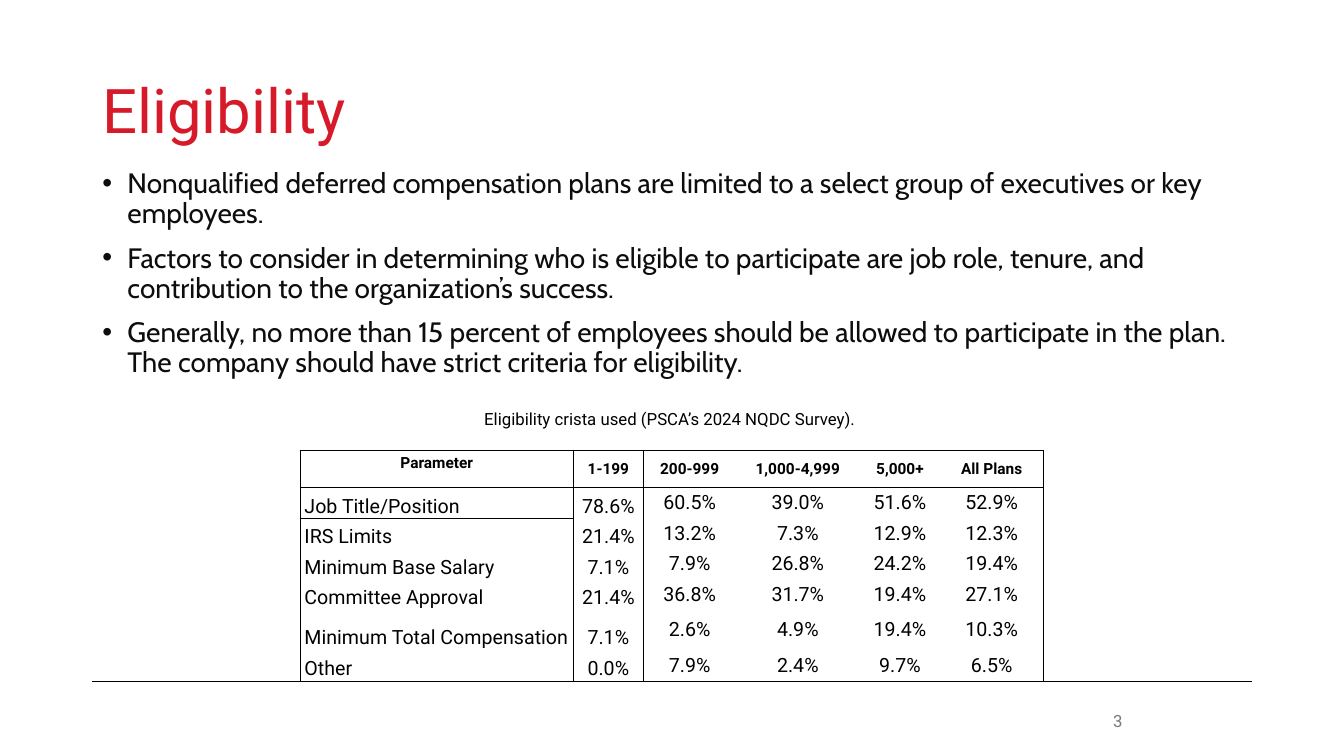
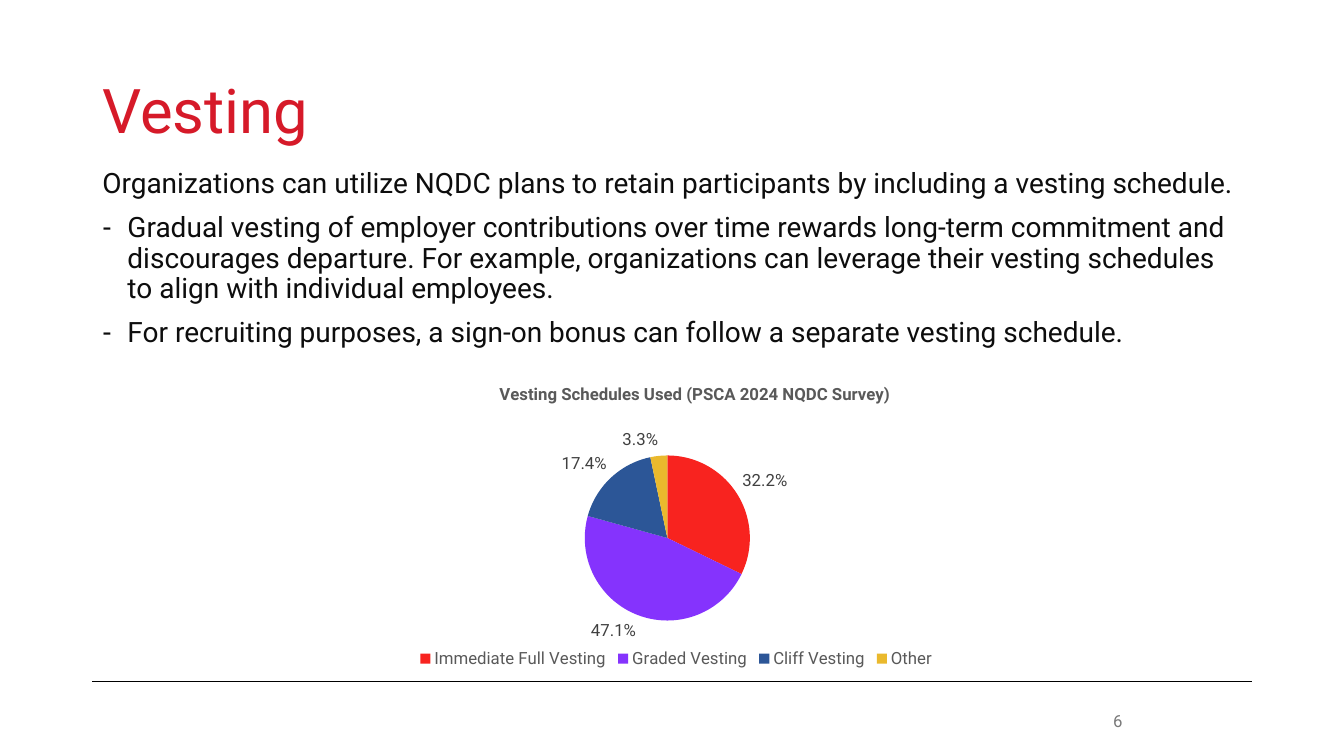
from dataclasses import dataclass

from lxml.etree import SubElement
from pptx import Presentation
from pptx.chart.data import CategoryChartData
from pptx.dml.color import RGBColor
from pptx.enum.chart import XL_CHART_TYPE, XL_LABEL_POSITION, XL_LEGEND_POSITION
from pptx.enum.shapes import MSO_CONNECTOR
from pptx.enum.text import MSO_ANCHOR, PP_ALIGN
from pptx.oxml.ns import qn
from pptx.presentation import Presentation as Deck
from pptx.slide import Slide
from pptx.text.text import Font, TextFrame
from pptx.util import Pt

RED = RGBColor(0xD6, 0x1A, 0x29)
INK = RGBColor(0x0D, 0x0D, 0x0D)
BLACK = RGBColor(0, 0, 0)
GRAY = RGBColor(0x79, 0x79, 0x79)
SLATE = RGBColor(0x59, 0x59, 0x59)
DARK = RGBColor(0x40, 0x40, 0x40)
HEAD, BODY = "Roboto", "Cabin"
LEFT, WIDE, RULE = 66, 828, 486.5
PLAIN = "{2D5ABB26-0587-4C30-8999-92F81FD0307C}"


@dataclass(frozen=True)
class Point:
    text: str
    mark: str = ""


@dataclass(frozen=True)
class Page:
    title: str
    page: str
    font: str
    points: tuple[Point, ...]


@dataclass(frozen=True)
class Slice:
    name: str
    share: float
    color: RGBColor


PLANS = Page("Eligibility", "3", BODY, (
    Point("Nonqualified deferred compensation plans are limited to a select group of "
          "executives or key employees.", "•"),
    Point("Factors to consider in determining who is eligible to participate are job role, "
          "tenure, and contribution to the organization’s success.", "•"),
    Point("Generally, no more than 15 percent of employees should be allowed to participate "
          "in the plan. The company should have strict criteria for eligibility.", "•"),
))
VESTING = Page("Vesting", "6", HEAD, (
    Point("Organizations can utilize NQDC plans to retain participants by including a "
          "vesting schedule."),
    Point("Gradual vesting of employer contributions over time rewards long-term commitment "
          "and discourages departure. For example, organizations can leverage their vesting "
          "schedules to align with individual employees.", "-"),
    Point("For recruiting purposes, a sign-on bonus can follow a separate vesting "
          "schedule.", "-"),
))
ROWS = (
    ("Parameter", "1-199", "200-999", "1,000-4,999", "5,000+", "All Plans"),
    ("Job Title/Position", "78.6%", "60.5%", "39.0%", "51.6%", "52.9%"),
    ("IRS Limits", "21.4%", "13.2%", "7.3%", "12.9%", "12.3%"),
    ("Minimum Base Salary", "7.1%", "7.9%", "26.8%", "24.2%", "19.4%"),
    ("Committee Approval", "21.4%", "36.8%", "31.7%", "19.4%", "27.1%"),
    ("Minimum Total Compensation", "7.1%", "2.6%", "4.9%", "19.4%", "10.3%"),
    ("Other", "0.0%", "7.9%", "2.4%", "9.7%", "6.5%"),
)
WIDTHS = (195, 50.2, 66, 88.5, 57.5, 73.5)
HEIGHTS = (26.6, 21.8, 21.8, 21.8, 21.8, 28.6, 22.2)
SLICES = (
    Slice("Immediate Full Vesting", 0.322, RGBColor(0xF8, 0x23, 0x1F)),
    Slice("Graded Vesting", 0.471, RGBColor(0x85, 0x33, 0xFD)),
    Slice("Cliff Vesting", 0.174, RGBColor(0x2C, 0x56, 0x97)),
    Slice("Other", 0.033, RGBColor(0xEA, 0xB9, 0x2D)),
)


def style(font: Font, size: float, color: RGBColor, face: str = HEAD,
          bold: bool = False) -> None:
    font.name, font.size, font.bold = face, Pt(size), bold
    font.color.rgb = color


def write(frame: TextFrame, text: str, *, size: float = 12, color: RGBColor = BLACK,
          face: str = HEAD, bold: bool = False, align: PP_ALIGN = PP_ALIGN.LEFT,
          lead: float = 1.0, gap: float = 0, mark: str = "") -> None:
    fresh = not frame.text
    para = frame.paragraphs[0] if fresh else frame.add_paragraph()
    if mark:
        props = para._p.get_or_add_pPr()
        props.set("marL", str(Pt(18)))
        props.set("indent", str(Pt(-18)))
        SubElement(props, qn("a:buFont"), typeface="Arial")
        SubElement(props, qn("a:buChar"), char=mark)
    para.alignment, para.line_spacing = align, lead
    if gap and not fresh:
        para.space_before = Pt(gap)
    run = para.add_run()
    run.text = text
    style(run.font, size, color, face, bold)


def add_box(slide: Slide, left: float, top: float, width: float, height: float,
            anchor: MSO_ANCHOR = MSO_ANCHOR.MIDDLE) -> TextFrame:
    frame = slide.shapes.add_textbox(Pt(left), Pt(top), Pt(width), Pt(height)).text_frame
    frame.word_wrap, frame.vertical_anchor = True, anchor
    return frame


def add_page(deck: Deck, page: Page) -> Slide:
    slide = deck.slides.add_slide(deck.slide_layouts.get_by_name("Title Only"))
    title = slide.shapes.title
    title.left, title.top, title.width, title.height = Pt(LEFT), Pt(29), Pt(WIDE), Pt(104.4)
    title.text_frame.vertical_anchor = MSO_ANCHOR.MIDDLE
    write(title.text_frame, page.title, size=44, color=RED, lead=0.9)

    rule = slide.shapes.add_connector(
        MSO_CONNECTOR.STRAIGHT, Pt(LEFT), Pt(RULE), Pt(LEFT + WIDE), Pt(RULE))
    rule.line.color.rgb, rule.line.width = BLACK, Pt(0.5)
    SubElement(rule.element.find(qn("p:spPr")), qn("a:effectLst"))

    body = add_box(slide, LEFT, 117.4, WIDE, 165, MSO_ANCHOR.TOP)
    base = body._txBody.find(qn("a:lstStyle"))
    level = SubElement(base, qn("a:lvl1pPr"))
    SubElement(level, qn("a:defRPr"), sz="2000")
    for point in page.points:
        write(body, point.text, size=20, color=INK, face=page.font, lead=0.9, gap=10,
              mark=point.mark)
    write(add_box(slide, 678, 500.5, 131, 28.8), page.page, color=GRAY, align=PP_ALIGN.RIGHT)
    return slide


def edge(cell, rules: dict[str, bool]) -> None:
    props = cell._tc.get_or_add_tcPr()
    for side, drawn in rules.items():
        line = SubElement(props, qn(f"a:ln{side}"), w=str(Pt(1)))
        if drawn:
            fill = SubElement(line, qn("a:solidFill"))
            SubElement(fill, qn("a:srgbClr"), val=str(BLACK))
        else:
            SubElement(line, qn("a:noFill"))


def add_grid(slide: Slide) -> None:
    shape = slide.shapes.add_table(len(ROWS), len(WIDTHS), Pt(214.5), Pt(321.8),
                                   Pt(sum(WIDTHS)), Pt(sum(HEIGHTS)))
    grid = shape.table
    grid.first_row = grid.horz_banding = False
    next(shape.element.iter(qn("a:tableStyleId"))).text = PLAIN
    for col, width in zip(grid.columns, WIDTHS):
        col.width = Pt(width)
    for row, height in zip(grid.rows, HEIGHTS):
        row.height = Pt(height)
    last = len(WIDTHS) - 1
    for r, words in enumerate(ROWS):
        for c, text in enumerate(words):
            cell = grid.cell(r, c)
            head, corner = r == 0, r == c == 0
            edge(cell, {"L": c < 3, "R": c < 2 or c == last,
                        "T": r < 2 or (r, c) == (2, 0), "B": head or (r, c) == (1, 0)})
            cell.fill.background()
            cell.margin_left = cell.margin_right = Pt(5 if corner else 4 if c else 3)
            cell.margin_top = cell.margin_bottom = Pt(3 if corner else 0)
            if corner:
                cell.vertical_anchor = MSO_ANCHOR.TOP
            elif head or c > 1:
                cell.vertical_anchor = MSO_ANCHOR.MIDDLE
            else:
                cell.vertical_anchor = MSO_ANCHOR.BOTTOM
            write(cell.text_frame, text, size=11 if head else 14, bold=head,
                  align=PP_ALIGN.CENTER if head or c else PP_ALIGN.LEFT)


def place(part, index: int, inner: bool = False, **spots: float) -> None:
    for old in part.findall(qn("c:layout")):
        part.remove(old)
    layout = SubElement(part, qn("c:layout"))
    part.insert(index, layout)
    manual = SubElement(layout, qn("c:manualLayout"))
    if inner:
        SubElement(manual, qn("c:layoutTarget"), val="inner")
    for axis in "xy":
        SubElement(manual, qn(f"c:{axis}Mode"), val="edge")
    for name, value in spots.items():
        SubElement(manual, qn(f"c:{name}"), val=str(value))


def add_pie(slide: Slide) -> None:
    data = CategoryChartData(number_format="0.0%")
    data.categories = [part.name for part in SLICES]
    data.add_series("Series 1", [part.share for part in SLICES])
    chart = slide.shapes.add_chart(XL_CHART_TYPE.PIE, Pt(270.3), Pt(266.4), Pt(421.2),
                                   Pt(226.8), data).chart
    style(chart.font, 10, BLACK)
    chart.has_title = True
    write(chart.chart_title.text_frame, "Vesting Schedules Used (PSCA 2024 NQDC Survey)",
          color=SLATE, bold=True)
    chart.has_legend = True
    chart.legend.position = XL_LEGEND_POSITION.BOTTOM
    chart.legend.include_in_layout = False
    style(chart.legend.font, 12, SLATE)

    plot = chart.plots[0]
    plot.vary_by_categories = True
    for index, part in enumerate(SLICES):
        fill = plot.series[0].points[index].format.fill
        fill.solid()
        fill.fore_color.rgb = part.color
    plot.has_data_labels = True
    labels = plot.data_labels
    labels.show_value, labels.position = True, XL_LABEL_POSITION.OUTSIDE_END
    labels.number_format, labels.number_format_is_linked = "0.0%", False
    style(labels.font, 12, DARK)

    root = chart.element
    place(next(root.iter(qn("c:title"))), 1, x=0.2, y=0.02)
    place(next(root.iter(qn("c:plotArea"))), 0, inner=True, x=0.35, y=0.26, w=0.28, h=0.52)
    place(next(root.iter(qn("c:legend"))), 1, x=0.06, y=0.86, w=0.89, h=0.08)


def main() -> None:
    deck = Presentation()
    deck.slide_width, deck.slide_height = Pt(960), Pt(540)
    plans = add_page(deck, PLANS)
    write(add_box(plans, LEFT - 1.5, 287, WIDE, 25),
          "Eligibility crista used (PSCA’s 2024 NQDC Survey).", align=PP_ALIGN.CENTER)
    add_grid(plans)
    add_pie(add_page(deck, VESTING))
    deck.save("out.pptx")


if __name__ == "__main__":
    main()
